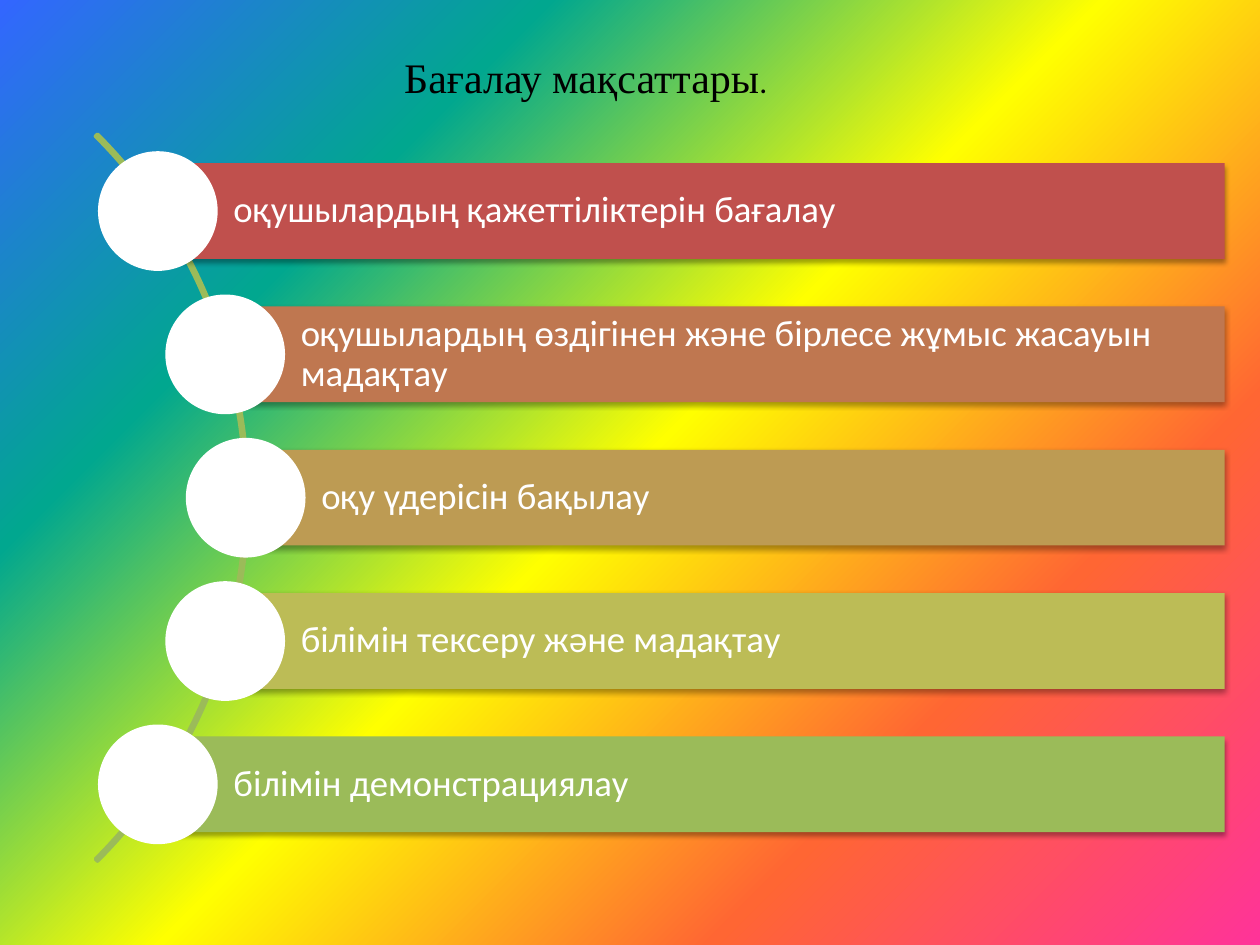
import math
from lxml import etree
from pptx import Presentation
from pptx.dml.color import RGBColor
from pptx.enum.shapes import MSO_SHAPE
from pptx.enum.text import MSO_ANCHOR, MSO_AUTO_SIZE, PP_ALIGN
from pptx.oxml import parse_xml
from pptx.oxml.ns import nsdecls, qn
from pptx.util import Inches, Pt

RECTANGLE = MSO_SHAPE.RECTANGLE
OVAL = MSO_SHAPE.OVAL
BLOCK_ARC = MSO_SHAPE.BLOCK_ARC
MIDDLE = MSO_ANCHOR.MIDDLE
LEFT = PP_ALIGN.LEFT
FIT_SHAPE = MSO_AUTO_SIZE.SHAPE_TO_FIT_TEXT

WIDTH, HEIGHT = 10, 7.5
ARC_X, ARC_Y = -2.11, 3.95
ARC_RADIUS, TRACK_RADIUS = 4.08, 4.06
ROW_PITCH = 1.1375
BAR_HEIGHT, BAR_RIGHT = 0.76, 9.72
DOT_SIZE = 0.95
GREEN, WHITE, BLACK = "9BBB59", "FFFFFF", "000000"

BACKGROUND_STOPS = [
    (0, "FF3399"), (25, "FF6633"), (50, "FFFF00"), (75, "01A78F"), (100, "3366FF"),
]
GOALS = [
    ("оқушылардың қажеттіліктерін бағалау", "C0504D"),
    ("оқушылардың өздігінен және бірлесе жұмыс жасауын мадақтау", "BF7750"),
    ("оқу үдерісін бақылау", "BD9B53"),
    ("білімін тексеру және мадақтау", "BCBC56"),
    ("білімін демонстрациялау", GREEN),
]


def color(value):
    return RGBColor.from_string(value)


def format_span(span, size, font, value):
    span.font.size = Pt(size)
    span.font.name = font
    span.font.color.rgb = color(value)


def paint_background(page):
    stops = "".join(
        f'<a:gs pos="{share * 1000}"><a:srgbClr val="{value}"/></a:gs>'
        for share, value in BACKGROUND_STOPS
    )
    gradient = parse_xml(
        f'<a:gradFill {nsdecls("a")} rotWithShape="1"><a:gsLst>{stops}</a:gsLst>'
        '<a:path path="circle"><a:fillToRect l="100000" t="100000"/></a:path>'
        '<a:tileRect r="-100000" b="-100000"/></a:gradFill>'
    )
    fill = page.background.fill
    fill.solid()
    fill.fore_color.rgb = color(WHITE)
    solid = page.element.find(".//" + qn("p:bgPr")).find(qn("a:solidFill"))
    solid.getparent().replace(solid, gradient)


def add_centered_shape(page, kind, x, y, width, height):
    shape = page.shapes.add_shape(
        kind, Inches(x - width / 2), Inches(y - height / 2), Inches(width), Inches(height)
    )
    shape.shadow.inherit = False
    shape.line.fill.background()
    return shape


def add_shadow(shape):
    effects = shape.element.spPr.find(qn("a:effectLst"))
    shadow = etree.SubElement(
        effects, qn("a:outerShdw"),
        blurRad=str(Pt(3.1)), dist=str(Pt(1.8)), dir="5400000", rotWithShape="0",
    )
    tint = etree.SubElement(shadow, qn("a:srgbClr"), val=BLACK)
    etree.SubElement(tint, qn("a:alpha"), val="35000")


def add_title(page):
    box = page.shapes.add_textbox(Inches(3.11), Inches(0.36), Inches(3.11), Inches(0.5))
    frame = box.text_frame
    frame.word_wrap = False
    frame.auto_size = FIT_SHAPE
    para = frame.paragraphs[0]
    for text, size, font in [("Бағалау мақсаттары", 24, "Times New Roman"), (".", 18, "Calibri")]:
        span = para.add_run()
        span.text = text
        format_span(span, size, font, BLACK)


def add_arc(page):
    arc = add_centered_shape(page, BLOCK_ARC, ARC_X, ARC_Y, 2 * ARC_RADIUS, 2 * ARC_RADIUS)
    for index, value in enumerate((189, 27, 0.003)):
        arc.adjustments[index] = value
    arc.fill.background()
    arc.line.color.rgb = color(GREEN)
    arc.line.width = Pt(2)


def add_bar(page, left, y, text, value):
    width = BAR_RIGHT - left
    bar = add_centered_shape(page, RECTANGLE, left + width / 2, y, width, BAR_HEIGHT)
    bar.fill.solid()
    bar.fill.fore_color.rgb = color(value)
    add_shadow(bar)
    frame = bar.text_frame
    frame.word_wrap = True
    frame.vertical_anchor = MIDDLE
    frame.margin_left = Inches(0.6)
    frame.margin_top = frame.margin_right = frame.margin_bottom = Inches(0.06)
    frame.text = text
    para = frame.paragraphs[0]
    para.alignment = LEFT
    para.line_spacing = 0.9
    format_span(para.runs[0], 21, "Calibri", WHITE)


def add_dot(page, x, y):
    dot = add_centered_shape(page, OVAL, x, y, DOT_SIZE, DOT_SIZE)
    dot.fill.solid()
    dot.fill.fore_color.rgb = color(WHITE)


def main():
    deck = Presentation()
    deck.slide_width, deck.slide_height = Inches(WIDTH), Inches(HEIGHT)
    page = deck.slides.add_slide(deck.slide_layouts[6])
    paint_background(page)
    add_title(page)
    add_arc(page)
    for row, (text, value) in enumerate(GOALS):
        offset = (row - (len(GOALS) - 1) / 2) * ROW_PITCH
        x = ARC_X + math.sqrt(TRACK_RADIUS ** 2 - offset ** 2)
        add_bar(page, x, ARC_Y + offset, text, value)
        add_dot(page, x, ARC_Y + offset)
    deck.save("out.pptx")


if __name__ == "__main__":
    main()
